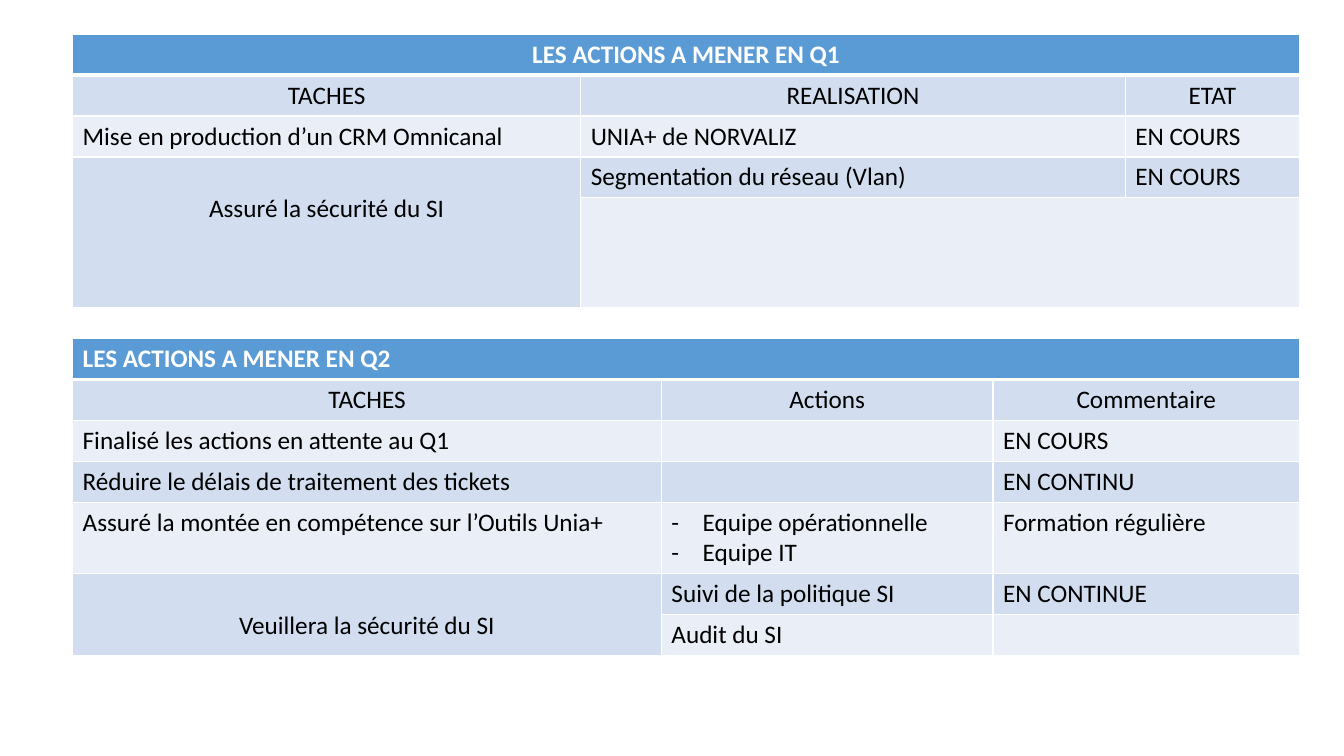
from lxml import etree
from pptx import Presentation, util as u
from pptx.dml.color import RGBColor
from pptx.enum import text
from pptx.oxml.ns import qn

THEME = {
    "font": "Calibri", "size": u.Pt(18),
    "title": "5B9BD5", "bands": ("EAEFF7", "D2DEEF"),
    "title_text": "FFFFFF", "body_text": "000000", "border": "FFFFFF",
}
LEFT, ROW = 0.72, 0.4
LINE_STEP = 0.31  # one text line, also the hanging indent of dashes
CENTER, START = text.PP_ALIGN.CENTER, text.PP_ALIGN.LEFT

# Each plan: position, grid, merged ranges (first cell, last cell), cell texts
PLANS = [
    {
        "top": 0.34, "title_align": CENTER,
        "columns": [5.04, 5.4, 1.73], "rows": [ROW] * 4 + [1.09],
        "merges": [((0, 0), (0, 2)), ((3, 0), (4, 0)), ((4, 1), (4, 2))],
        "tall": (3, 0), "dashed": None,
        "texts": [
            ["LES ACTIONS A MENER EN Q1", "", ""],
            ["TACHES", "REALISATION", "ETAT"],
            ["Mise en production d’un CRM Omnicanal", "UNIA+ de NORVALIZ", "EN COURS"],
            ["Assuré la sécurité du SI", "Segmentation du réseau (Vlan)", "EN COURS"],
            ["", "", ""],
        ],
    },
    {
        "top": 3.36, "title_align": START,
        "columns": [5.84, 3.29, 3.04], "rows": [ROW] * 4 + [ROW + LINE_STEP] + [ROW] * 2,
        "merges": [((0, 0), (0, 2)), ((5, 0), (6, 0))],
        "tall": (5, 0), "dashed": (4, 1),
        "texts": [
            ["LES ACTIONS A MENER EN Q2", "", ""],
            ["TACHES", "Actions", "Commentaire"],
            ["Finalisé les actions en attente au Q1", "", "EN COURS"],
            ["Réduire le délais de traitement des tickets", "", "EN CONTINU"],
            ["Assuré la montée en compétence sur l’Outils Unia+",
             "Equipe opérationnelle\nEquipe IT", "Formation régulière"],
            ["Veuillera la sécurité du SI", "Suivi de la politique SI", "EN CONTINUE"],
            ["", "Audit du SI", ""],
        ],
    },
]


def add_borders(cell, row):
    """White cell borders, with a heavy rule under the title row."""
    widths = {"lnL": 1, "lnR": 1, "lnT": 3 if row == 1 else 1, "lnB": 3 if row == 0 else 1}
    properties = cell._tc.get_or_add_tcPr()
    for index, (tag, width) in enumerate(widths.items()):
        line = etree.Element(qn(f"a:{tag}"), w=str(u.Pt(width)))
        fill = etree.SubElement(line, qn("a:solidFill"))
        etree.SubElement(fill, qn("a:srgbClr"), val=THEME["border"])
        properties.insert(index, line)


def add_dash(para):
    """Dash bullet with a hanging indent."""
    properties = para._p.get_or_add_pPr()
    properties.set("marL", str(u.Inches(LINE_STEP)))
    properties.set("indent", str(-u.Inches(LINE_STEP)))
    etree.SubElement(properties, qn("a:buFont"), typeface=THEME["font"])
    etree.SubElement(properties, qn("a:buChar"), char="-")


deck = Presentation()
deck.slide_width, deck.slide_height = u.Inches(13.33), u.Inches(7.5)
page = deck.slides.add_slide(deck.slide_layouts[6])

for plan in PLANS:
    # Table grid
    columns, rows = plan["columns"], plan["rows"]
    table = page.shapes.add_table(
        len(rows), len(columns), u.Inches(LEFT), u.Inches(plan["top"]),
        u.Inches(sum(columns)), u.Inches(sum(rows))).table
    table.horz_banding = False
    for column, width in zip(table.columns, columns):
        column.width = u.Inches(width)
    for line, height in zip(table.rows, rows):
        line.height = u.Inches(height)
    for first, last in plan["merges"]:
        table.cell(*first).merge(table.cell(*last))

    # Cell fills, borders and texts
    for row, texts in enumerate(plan["texts"]):
        is_title = row == 0
        color = THEME["title"] if is_title else THEME["bands"][row % 2]
        font = {"name": THEME["font"], "size": THEME["size"], "bold": is_title}
        ink = THEME["title_text"] if is_title else THEME["body_text"]
        for col, words in enumerate(texts):
            cell = table.cell(row, col)
            if cell.is_spanned:
                continue
            cell.fill.solid()
            cell.fill.fore_color.rgb = RGBColor.from_string(color)
            add_borders(cell, row)
            if not words:
                continue
            cell.text = words
            is_tall = (row, col) == plan["tall"]
            if is_tall:
                cell.margin_top = u.Inches(0.05 + LINE_STEP)
            align = plan["title_align"] if is_title else CENTER if row == 1 or is_tall else START
            for para in cell.text_frame.paragraphs:
                para.alignment = align
                if (row, col) == plan["dashed"]:
                    add_dash(para)
                for span in para.runs:
                    for key, value in font.items():
                        setattr(span.font, key, value)
                    span.font.color.rgb = RGBColor.from_string(ink)

deck.save("out.pptx")
